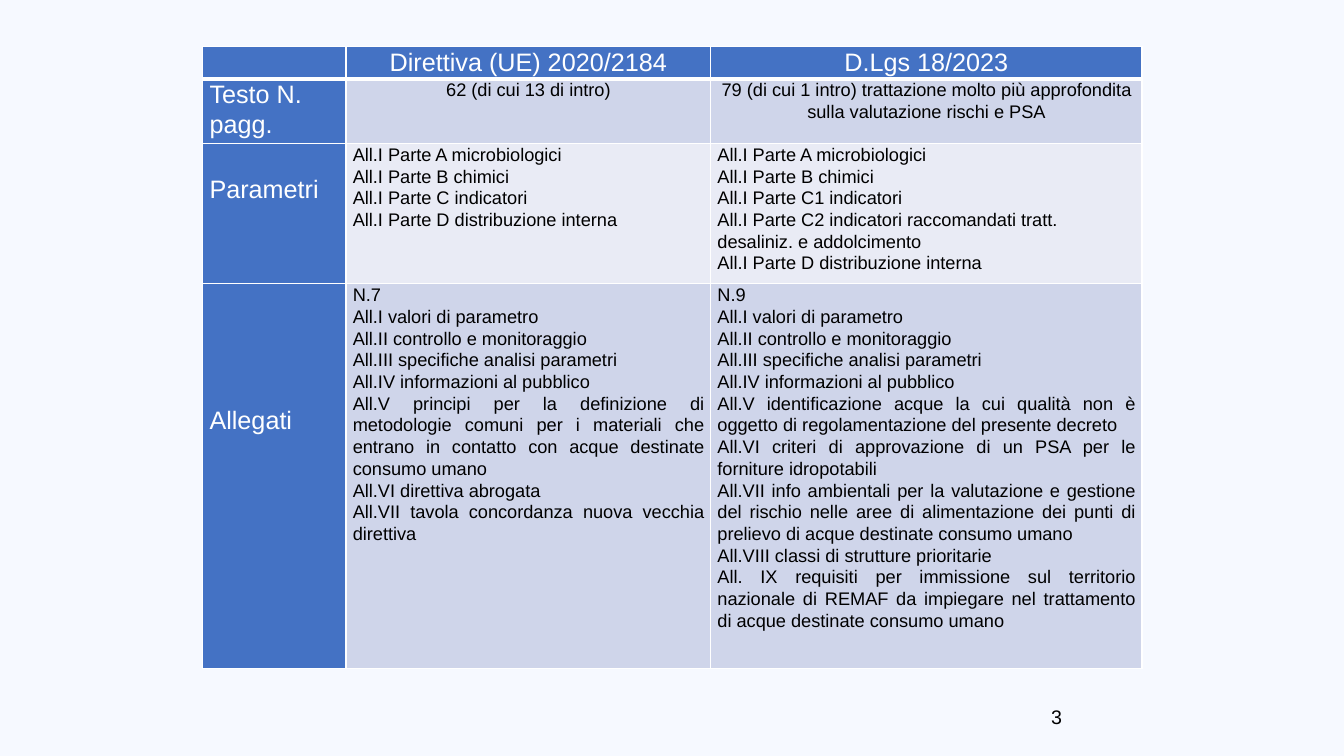
"""Build a slide comparing the directive with the national decree."""
from lxml import etree
from pptx import Presentation
from pptx.dml.color import RGBColor
from pptx.enum.text import PP_ALIGN
from pptx.oxml.ns import qn
from pptx.util import Cm, Pt

LEFT, CENTER, JUSTIFY = PP_ALIGN.LEFT, PP_ALIGN.CENTER, PP_ALIGN.JUSTIFY
FONT = "Arial"
COLORS = {
    "page": "F6F9FF",
    "head": "4472C4",
    "band": "CFD5EA",
    "light": "E9EBF5",
    "white": "FFFFFF",
    "black": "000000",
}
COLUMN_WIDTHS = (3.61, 9.19, 10.87)
ROW_HEIGHTS = (0.79, 1.55, 3.38, 9.7)
ROW_FILLS = ("head", "band", "light", "band")
LABEL_LINE = 0.76
LABEL_OFFSETS = (0, 0, 1, 4)
ALIGNMENTS = (
    (LEFT, CENTER, CENTER),
    (LEFT, CENTER, CENTER),
    (LEFT, JUSTIFY, LEFT),
    (LEFT, JUSTIFY, JUSTIFY),
)
COMMON_ANNEXES = """All.I valori di parametro
All.II controllo e monitoraggio
All.III specifiche analisi parametri
All.IV informazioni al pubblico
"""
ROWS = (
    ("", "Direttiva (UE) 2020/2184", "D.Lgs 18/2023"),
    (
        "Testo N. pagg.",
        "62 (di cui 13 di intro)",
        "79 (di cui 1 intro) trattazione molto più approfondita sulla valutazione rischi e PSA",
    ),
    (
        "Parametri",
        """All.I Parte A microbiologici
All.I Parte B chimici
All.I Parte C indicatori
All.I Parte D distribuzione interna""",
        """All.I Parte A microbiologici
All.I Parte B chimici
All.I Parte C1 indicatori
All.I Parte C2 indicatori raccomandati tratt. desaliniz. e addolcimento
All.I Parte D distribuzione interna""",
    ),
    (
        "Allegati",
        "N.7\n" + COMMON_ANNEXES
        + """All.V principi per la definizione di metodologie comuni per i materiali che entrano in contatto con acque destinate consumo umano
All.VI direttiva abrogata
All.VII tavola concordanza nuova vecchia direttiva""",
        "N.9\n" + COMMON_ANNEXES
        + """All.V identificazione acque la cui qualità non è oggetto di regolamentazione del presente decreto
All.VI criteri di approvazione di un PSA per le forniture idropotabili
All.VII info ambientali per la valutazione e gestione del rischio nelle aree di alimentazione dei punti di prelievo di acque destinate consumo umano
All.VIII classi di strutture prioritarie
All. IX requisiti per immissione sul territorio nazionale di REMAF da impiegare nel trattamento di acque destinate consumo umano""",
    ),
)


def rgb(name):
    """Return the named colour."""
    return RGBColor.from_string(COLORS[name])


def style_font(font, size, color):
    """Set typeface, size and colour."""
    font.name = FONT
    font.size = Pt(size)
    font.bold = False
    font.color.rgb = rgb(color)


def add_borders(cell, bottom_width):
    """Draw white lines on the four sides of a cell."""
    properties = cell._tc.get_or_add_tcPr()
    for side, width in (("L", 1), ("R", 1), ("T", 1), ("B", bottom_width)):
        line = etree.SubElement(properties, qn(f"a:ln{side}"), w=str(Pt(width)))
        fill = etree.SubElement(line, qn("a:solidFill"))
        etree.SubElement(fill, qn("a:srgbClr"), val=COLORS["white"])


def fill_cell(cell, text, row, column):
    """Write and style one cell according to its place in the table."""
    heading = row == 0 or column == 0
    add_borders(cell, 3 if row == 0 else 1)
    cell.fill.solid()
    cell.fill.fore_color.rgb = rgb("head" if heading else ROW_FILLS[row])
    cell.margin_left = cell.margin_right = Cm(0.17)
    cell.margin_top = Cm(LABEL_LINE * LABEL_OFFSETS[row] if column == 0 else 0)
    cell.margin_bottom = Cm(0)
    cell.text_frame.text = text
    for paragraph in cell.text_frame.paragraphs:
        paragraph.alignment = ALIGNMENTS[row][column]
        paragraph.line_spacing = 1.07
        for span in paragraph.runs:
            style_font(span.font, 18 if heading else 13, "white" if heading else "black")


def add_comparison(page):
    """Add the comparison table."""
    frame = page.shapes.add_table(
        len(ROWS), len(COLUMN_WIDTHS), Cm(5.11), Cm(1.17),
        Cm(sum(COLUMN_WIDTHS)), Cm(sum(ROW_HEIGHTS)),
    )
    table = frame.table
    table.horz_banding = False
    for column, width in zip(table.columns, COLUMN_WIDTHS):
        column.width = Cm(width)
    for row, height in zip(table.rows, ROW_HEIGHTS):
        row.height = Cm(height)
    for row, texts in enumerate(ROWS):
        for column, text in enumerate(texts):
            fill_cell(table.cell(row, column), text, row, column)


def add_page_number(page, number):
    """Add the page number at the lower right."""
    box = page.shapes.add_textbox(Cm(26.24), Cm(17.65), Cm(7.62), Cm(1.02))
    box.text_frame.word_wrap = True
    box.text_frame.text = number
    style_font(box.text_frame.paragraphs[0].runs[0].font, 14, "black")


def main():
    """Create and save the deck."""
    deck = Presentation()
    deck.slide_width, deck.slide_height = Cm(33.87), Cm(19.05)
    page = deck.slides.add_slide(deck.slide_layouts[6])
    page.background.fill.solid()
    page.background.fill.fore_color.rgb = rgb("page")
    add_page_number(page, "3")
    add_comparison(page)
    deck.save("out.pptx")


if __name__ == "__main__":
    main()
